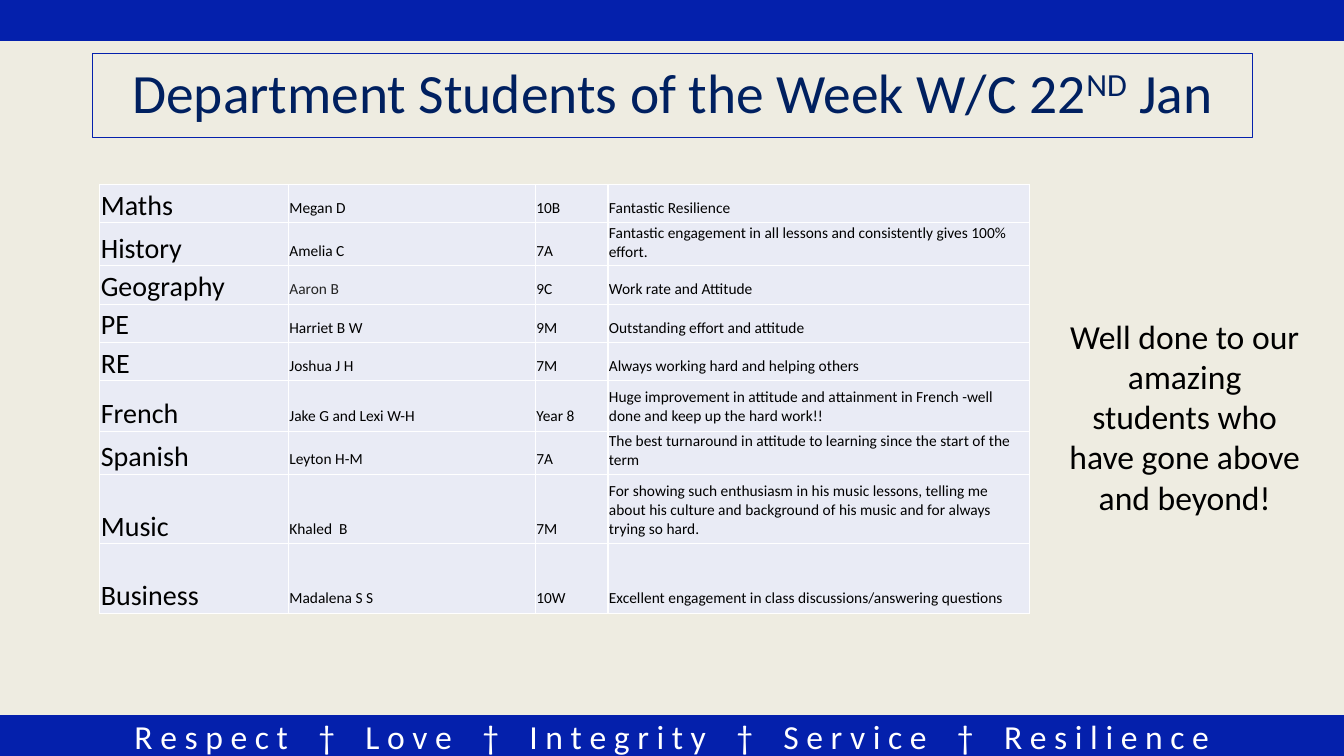
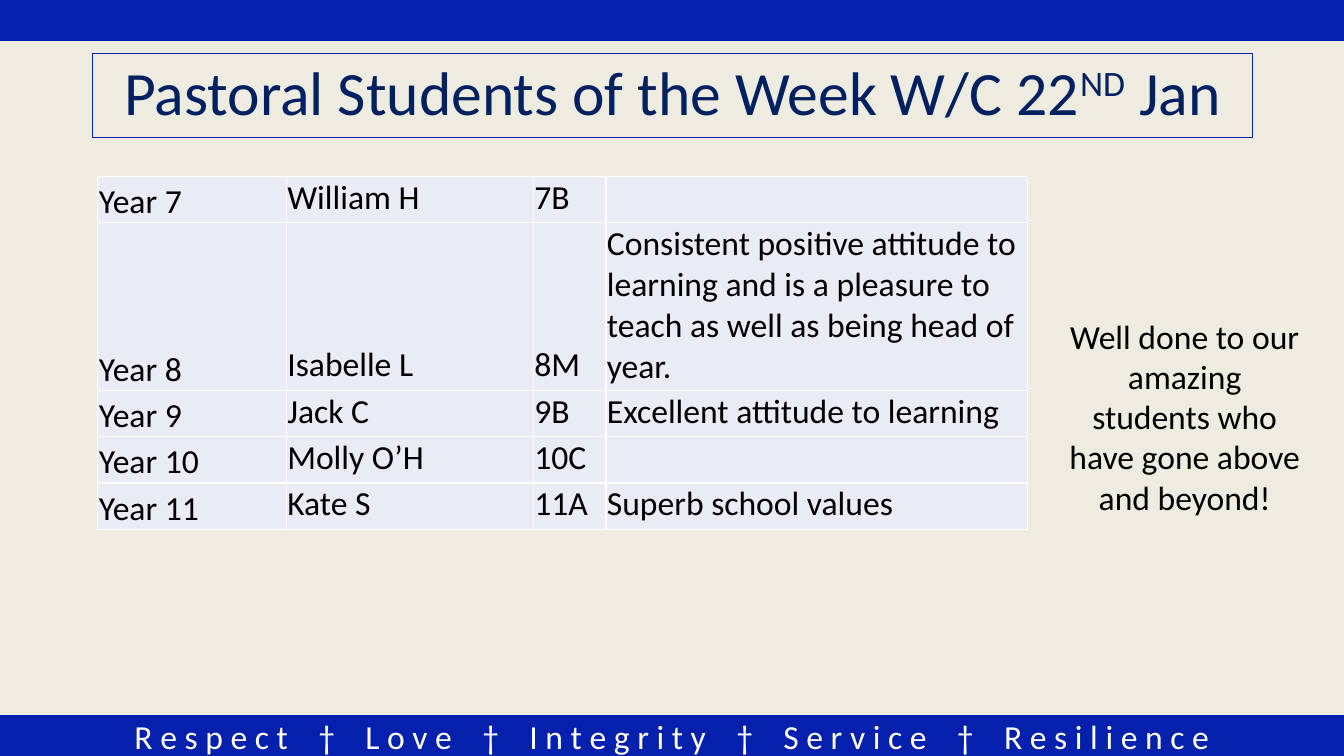
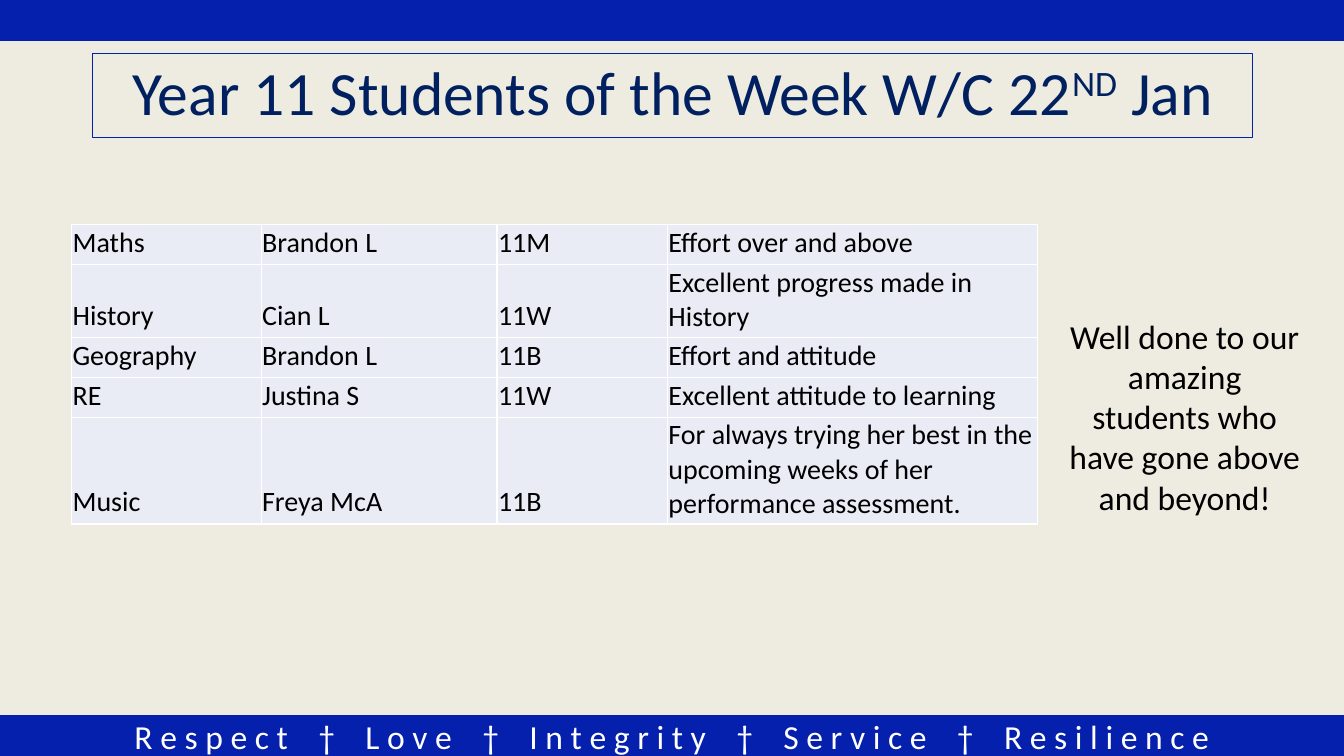
from lxml.etree import SubElement
from pptx import Presentation
from pptx.dml.color import RGBColor
from pptx.enum.shapes import MSO_SHAPE as SHAPE
from pptx.enum.text import MSO_ANCHOR as ANCHOR, MSO_AUTO_SIZE as AUTO, PP_ALIGN as ALIGN
from pptx.oxml.ns import qn
from pptx.util import Inches, Pt

COLORS = {"background": "EEECE1", "band": "0420AC", "title": "002060", "cell": "E9EBF5",
          "white": "FFFFFF", "text": "000000", "charcoal": "242424"}
FONT = "Calibri"
WIDTH, HEIGHT, BAND = 13.33, 7.5, 0.4
TITLE_BOX = (0.92, 0.53, 11.5, 0.83)
PRAISE_BOX = (10.48, 3.08, 2.54, 2.12)
VALUES = ["Respect", "Love", "Integrity", "Service", "Resilience"]
PRAISE = "Well done to our amazing students who have gone above and beyond!"

DEPARTMENT = [
    ("Maths", "Megan D", "10B", "Fantastic Resilience"),
    ("History", "Amelia C", "7A",
     "Fantastic engagement in all lessons and consistently gives 100% effort."),
    ("Geography", "Aaron B", "9C", "Work rate and Attitude"),
    ("PE", "Harriet B W", "9M", "Outstanding effort and attitude"),
    ("RE", "Joshua J H", "7M", "Always working hard and helping others"),
    ("French", "Jake G and Lexi W-H", "Year 8",
     "Huge improvement in attitude and attainment in French -well done and keep up the hard work!!"),
    ("Spanish", "Leyton H-M", "7A",
     "The best turnaround in attitude to learning since the start of the term"),
    ("Music", "Khaled  B", "7M",
     "For showing such enthusiasm in his music lessons, telling me about his culture and "
     "background of his music and for always trying so hard."),
    ("Business", "Madalena S S", "10W",
     "Excellent engagement in class discussions/answering questions"),
]
PASTORAL = [
    ("Year 7", "William H", "7B", ""),
    ("Year 8", "Isabelle L", "8M",
     "Consistent positive attitude to learning and is a pleasure to teach as well as "
     "being head of year."),
    ("Year 9", "Jack C", "9B", "Excellent attitude to learning"),
    ("Year 10", "Molly O’H", "10C", ""),
    ("Year 11", "Kate S", "11A", "Superb school values"),
]
YEAR_11 = [
    ("Maths", "Brandon L", "11M", "Effort over and above"),
    ("History", "Cian L", "11W", "Excellent progress made in History"),
    ("Geography", "Brandon L", "11B", "Effort and attitude"),
    ("RE", "Justina S", "11W", "Excellent attitude to learning"),
    ("Music", "Freya McA", "11B",
     "For always trying her best in the upcoming weeks of her performance assessment."),
]

SHORT, MEDIUM, TALL = 0.38, 0.5, 0.69
WIDE_REASON = (1.87, 2.45, 0.72, 4.18)
SLIDES = [
    dict(group="Department", title_size=39.6,
         table=dict(at=(0.99, 1.83), cols=WIDE_REASON,
                    heights=[SHORT] * 5 + [MEDIUM, SHORT, TALL, TALL], rows=DEPARTMENT,
                    sizes=(20, 11), first_bottom=0, tints={"Aaron B": "charcoal"})),
    dict(group="Pastoral", title_size=44,
         table=dict(at=(0.97, 1.75), cols=WIDE_REASON, heights=[SHORT] * 5, rows=PASTORAL,
                    sizes=(24, 24), first_bottom=0)),
    dict(group="Year 11", title_size=44,
         table=dict(at=(0.71, 2.23), cols=(1.88, 2.34, 1.69, 3.67),
                    heights=[SHORT] * 4 + [TALL], rows=YEAR_11, sizes=(20, 20))),
]


def rgb(name):
    return RGBColor.from_string(COLORS[name])


def set_all(obj, values):
    for name, value in values.items():
        setattr(obj, name, value)


def add_run(p, text, size, color="text"):
    r = p.add_run()
    r.text = text
    set_all(r.font, dict(name=FONT, size=Pt(size)))
    r.font.color.rgb = rgb(color)
    return r


def add_bands(s, layout):
    """Draw the top band and the footer band, then move them to the layout."""
    for number, top in enumerate((HEIGHT - BAND, 0)):
        band = s.shapes.add_shape(SHAPE.RECTANGLE, *map(Inches, (0, top, WIDTH, BAND)))
        band.shadow.inherit = False
        band.fill.solid()
        band.fill.fore_color.rgb = band.line.color.rgb = rgb("band")
        band.line.width = Pt(1)
        if top:
            tf = band.text_frame
            tf.vertical_anchor = ANCHOR.MIDDLE
            p = tf.paragraphs[0]
            p.alignment = ALIGN.CENTER
            add_run(p, "    †    ".join(" ".join(word) for word in VALUES), 24, "white")
        band.element.nvSpPr.cNvPr.id = 20 + number
        layout.shapes.element.insert(2 + number, band.element)


def add_title(s, box, group, size):
    title = s.shapes.title
    set_all(title, dict(zip(("left", "top", "width", "height"), map(Inches, box))))
    title.line.color.rgb = rgb("band")
    title.line.width = Pt(0.75)
    set_all(title.text_frame, dict(auto_size=AUTO.NONE, word_wrap=True,
                                   vertical_anchor=ANCHOR.MIDDLE))
    p = title.text_frame.paragraphs[0]
    set_all(p, dict(alignment=ALIGN.CENTER, line_spacing=0.9))
    add_run(p, f"{group} Students of the Week W/C 22", size, "title")
    ordinal = add_run(p, "ND", size, "title")
    ordinal.font._element.set("baseline", "30000")
    add_run(p, " Jan", size, "title")


def add_praise(s, box):
    tf = s.shapes.add_textbox(*map(Inches, box)).text_frame
    set_all(tf, dict(word_wrap=True, auto_size=AUTO.SHAPE_TO_FIT_TEXT))
    p = tf.paragraphs[0]
    p.alignment = ALIGN.CENTER
    add_run(p, PRAISE, 24)


def add_borders(cell):
    tc_pr = cell._tc.get_or_add_tcPr()
    for side in ("a:lnL", "a:lnR", "a:lnT", "a:lnB"):
        ln = SubElement(tc_pr, qn(side), w=str(Pt(1)))
        fill = SubElement(ln, qn("a:solidFill"))
        SubElement(fill, qn("a:srgbClr"), val=COLORS["white"])


def add_student_table(s, at, cols, heights, rows, sizes, first_bottom=0.05, tints={}):
    """Place the table; sizes are for the first column and for the others."""
    box = (*at, sum(cols), sum(heights))
    table = s.shapes.add_table(len(rows), len(cols), *map(Inches, box)).table
    set_all(table, dict(first_row=False, horz_banding=False))
    for column, width in zip(table.columns, cols):
        column.width = Inches(width)
    for row, height, texts in zip(table.rows, heights, rows):
        row.height = Inches(height)
        for i, (cell, text) in enumerate(zip(row.cells, texts)):
            edge = Inches(0.01)
            set_all(cell, dict(margin_left=edge, margin_right=edge, margin_top=edge,
                               margin_bottom=Inches(0.05 if i else first_bottom),
                               vertical_anchor=ANCHOR.BOTTOM))
            add_borders(cell)
            cell.fill.solid()
            cell.fill.fore_color.rgb = rgb("cell")
            if text:
                add_run(cell.text_frame.paragraphs[0], text, sizes[min(i, 1)],
                        tints.get(text, "text"))


def main():
    prs = Presentation()
    set_all(prs, dict(slide_width=Inches(WIDTH), slide_height=Inches(HEIGHT)))
    background = prs.slide_master.background.fill
    background.solid()
    background.fore_color.rgb = rgb("background")
    layout = prs.slide_layouts.get_by_name("Title Only")
    for number, content in enumerate(SLIDES):
        s = prs.slides.add_slide(layout)
        if number == 0:
            add_bands(s, layout)
        add_title(s, TITLE_BOX, content["group"], content["title_size"])
        add_praise(s, PRAISE_BOX)
        add_student_table(s, **content["table"])
    prs.save("out.pptx")


if __name__ == "__main__":
    main()
